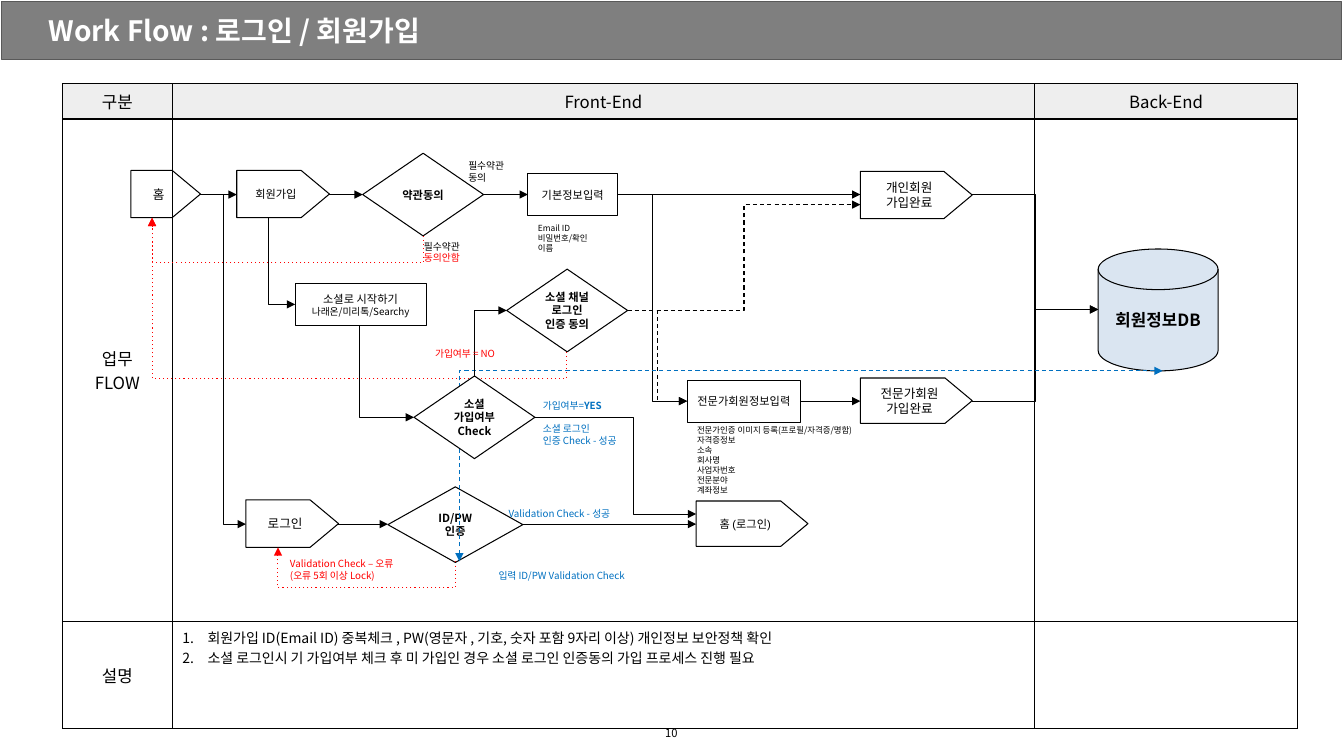
from lxml.etree import SubElement
from pptx import Presentation
from pptx.dml.color import RGBColor
from pptx.enum.shapes import MSO_CONNECTOR as CONN, MSO_SHAPE as SHAPE
from pptx.enum.text import MSO_ANCHOR as ANCHOR, MSO_AUTO_SIZE as FIT, PP_ALIGN as ALIGN
from pptx.oxml.ns import qn
from pptx.util import Emu, Pt

COLORS = {"ink": "000000", "red": "FF0000", "blue": "0070C0", "white": "FFFFFF",
          "head": "EEEEEE", "disk": "DAE5F1", "bar": "7F7F7F", "edge": "595959"}
NOTO, ARIAL = "Noto Sans CJK KR", "Arial"


def px(n):
    return Emu(round(n * 9144))


def rgb(name):
    return RGBColor.from_string(COLORS[name])


class Deck:
    def __init__(self, width, height):
        self.prs = Presentation()
        self.prs.slide_width, self.prs.slide_height = px(width), px(height)
        self.s = self.prs.slides.add_slide(self.prs.slide_layouts[5])

    def text(self, tf, lines, size, color="ink", bold=False, font=NOTO,
             align=ALIGN.LEFT, inset=(10, 5, 10, 5)):
        frame = dict(zip(("margin_left", "margin_top", "margin_right", "margin_bottom"),
                         map(px, inset)))
        frame.update(word_wrap=True, auto_size=FIT.NONE, vertical_anchor=ANCHOR.MIDDLE)
        for key, value in frame.items():
            setattr(tf, key, value)
        for i, line in enumerate(lines):
            p = tf.paragraphs[0] if i == 0 else tf.add_paragraph()
            p.alignment = align
            for text, changes in [(line, {})] if isinstance(line, str) else line:
                r = p.add_run()
                r.text = text
                fmt = {"size": Pt(size), "bold": bold, "name": font, "color": color, **changes}
                r.font.color.rgb = rgb(fmt.pop("color"))
                for key, value in fmt.items():
                    setattr(r.font, key, value)
                SubElement(r.font._element, qn("a:ea"), typeface=NOTO)

    def title(self, box, lines, **fmt):
        sp = self.s.shapes.title
        sp.left, sp.top, sp.width, sp.height = map(px, box)
        self.text(sp.text_frame, lines, **fmt)
        sp._element.getparent().append(sp._element)

    def shape(self, kind, box, lines=(), fill=None, line="ink", size=8, **fmt):
        sp = self.s.shapes.add_shape(kind, *map(px, box))
        sp.shadow.inherit = False
        if fill:
            sp.fill.solid()
            sp.fill.fore_color.rgb = rgb(fill)
        else:
            sp.fill.background()
        sp.line.color.rgb = rgb(line)
        sp.line.width = Pt(0.75)
        if kind == SHAPE.PENTAGON:
            sp.adjustments[0] = 0.6
        self.text(sp.text_frame, lines, size, align=ALIGN.CENTER, **fmt)

    def step(self, box, *lines, size=9):
        self.shape(SHAPE.PENTAGON, box, lines, size=size, font=ARIAL)

    def process(self, box, *lines):
        self.shape(SHAPE.FLOWCHART_PROCESS, box, lines, inset=(4, 5, 4, 5))

    def decision(self, box, *lines):
        self.shape(SHAPE.FLOWCHART_DECISION, box, lines, fill="white", bold=True,
                   inset=(4, 5, 4, 5))

    def label(self, box, *lines, size=7, **fmt):
        sp = self.s.shapes.add_textbox(*map(px, box))
        self.text(sp.text_frame, lines, size, **fmt)

    def link(self, x1, y1, x2, y2, color="ink", dash=None, adj=0.5,
             vertical=False, corner=False, both=False):
        kind = CONN.STRAIGHT if y1 == y2 else CONN.ELBOW
        turn = None
        if vertical:
            right = x2 > x1
            turn = 270 if right else 90
            cx, cy = (x1 + x2) / 2, (y1 + y2) / 2
            dx, dy = abs(y2 - y1) / 2, abs(x2 - x1) / 2
            if (y2 > y1) == right:
                dx = -dx
            x1, y1, x2, y2 = cx - dx, cy - dy, cx + dx, cy + dy
        c = self.s.shapes.add_connector(kind, *map(px, (x1, y1, x2, y2)))
        c.line.color.rgb = rgb(color)
        c.line.width = Pt(0.75)
        spPr = c._element.spPr
        if turn:
            spPr.find(qn("a:xfrm")).set("rot", str(turn * 60000))
        geom = spPr.find(qn("a:prstGeom"))
        if corner:
            geom.set("prst", "bentConnector2")
        elif kind == CONN.ELBOW:
            SubElement(geom.find(qn("a:avLst")), qn("a:gd"), name="adj1",
                       fmla=f"val {round(adj * 100000)}")
        ln = spPr.find(qn("a:ln"))
        if dash:
            SubElement(ln, qn("a:prstDash"), val=dash)
        for end in ("a:headEnd", "a:tailEnd") if both else ("a:tailEnd",):
            SubElement(ln, qn(end), type="triangle")
        SubElement(spPr, qn("a:effectLst"))

    def cell(self, cell, lines, fill=None, numbered=False):
        tcPr = cell._tc.get_or_add_tcPr()
        for side in "LRTB":
            ln = SubElement(tcPr, qn(f"a:ln{side}"), w=str(int(Pt(1))))
            SubElement(SubElement(ln, qn("a:solidFill")), qn("a:srgbClr"), val=COLORS["ink"])
        if fill:
            cell.fill.solid()
            cell.fill.fore_color.rgb = rgb(fill)
        else:
            cell.fill.background()
        tf = cell.text_frame
        self.text(tf, lines, 10 if numbered else 12,
                  align=ALIGN.LEFT if numbered else ALIGN.CENTER)
        cell.vertical_anchor = ANCHOR.TOP if numbered else ANCHOR.MIDDLE
        for p in tf.paragraphs if numbered else ():
            pPr = p._p.get_or_add_pPr()
            pPr.set("marL", str(int(px(25))))
            pPr.set("indent", str(-int(px(25))))
            SubElement(pPr, qn("a:buFont"), typeface=NOTO)
            SubElement(pPr, qn("a:buAutoNum"), type="arabicPeriod")

    def table(self, left, top, widths, heights, rows):
        box = map(px, (left, top, sum(widths), sum(heights)))
        tbl = self.s.shapes.add_table(len(heights), len(widths), *box).table
        for col, width in zip(tbl.columns, widths):
            col.width = px(width)
        for row, height in zip(tbl.rows, heights):
            row.height = px(height)
        for i, row in enumerate(rows):
            for j, lines in enumerate(row):
                self.cell(tbl.cell(i, j), lines, "head" if i == 0 else None, (i, j) == (2, 1))


def main():
    d = Deck(1334, 750)
    d.shape(SHAPE.RECTANGLE, (2, 2, 1330, 57), fill="bar", line="edge")
    d.title((29, 0, 1276, 60), ["Work Flow : 로그인 / 회원가입"], size=20, color="white",
            bold=True, inset=(19, 6, 11, 6))
    d.table(62, 83, (109, 856, 261), (35, 499, 106), [
        [["구분"], ["Front-End"], ["Back-End"]],
        [["업무", "FLOW"], [], []],
        [["설명"],
         ["회원가입 ID(Email ID) 중복체크 , PW(영문자 , 기호, 숫자 포함 9자리 이상) 개인정보 보안정책 확인",
          "소셜 로그인시 기 가입여부 체크 후 미 가입인 경우 소셜 로그인 인증동의 가입 프로세스 진행 필요"],
         []]])
    d.label((0, 708, 1333, 39), "10", size=8, align=ALIGN.CENTER)

    d.step((130, 169, 69, 47), "홈")
    d.step((235, 169, 92, 47), "회원가입", size=8)
    d.step((854, 170, 111, 47), "개인회원", "가입완료")
    d.step((854, 375, 111, 45), "전문가회원", "가입완료")
    d.step((244, 496, 92, 47), "로그인")
    d.step((691, 497, 111, 45), "홈 (로그인)", size=8)
    d.process((524, 172, 89, 42), "기본정보입력")
    d.process((682, 377, 113, 42), "전문가회원정보입력")
    d.process((293, 281, 130, 42), "소셜로 시작하기", [("나래온/미리톡/Searchy", {"size": Pt(7)})])
    d.decision((360, 152, 120, 82), "약관동의")
    d.decision((503, 267, 120, 82), "소셜 채널", "로그인", "인증 동의")
    d.decision((385, 483, 134, 75), "ID/PW", "인증")
    d.shape(SHAPE.FLOWCHART_MAGNETIC_DISK, (1090, 247, 119, 121), ["회원정보DB"],
            fill="disk", size=12, bold=True)

    for x1, x2, y in ((199, 235, 193), (327, 360, 193), (480, 524, 193), (613, 854, 193),
                      (795, 854, 398), (336, 385, 520), (519, 691, 520)):
        d.link(x1, y, x2, y)
    d.link(199, 193, 244, 520)
    d.link(613, 193, 682, 398)
    d.link(965, 193, 1090, 307)
    d.link(965, 398, 1090, 307)
    d.link(531, 414, 691, 510, adj=0.61)
    d.link(623, 308, 854, 203, dash="dash")
    d.link(623, 308, 682, 398, dash="dash")
    d.link(456, 557, 1154, 368, color="blue", dash="dash", adj=0, both=True)
    for x1, y1, x2, y2, adj in ((420, 234, 151, 216, -1.47), (562, 349, 151, 216, -0.2),
                                (452, 557, 276, 543, -1.86)):
        d.link(x1, y1, x2, y2, color="red", dash="dot", adj=adj, vertical=True)
    for ends in ((267, 216, 293, 302), (357, 323, 411, 414), (471, 373, 503, 308)):
        d.link(*ends, vertical=True, corner=True)
    d.decision((411, 373, 120, 82), "소셜", "가입여부", "Check")

    d.label((455, 153, 74, 34), "필수약관", "동의")
    d.label((411, 233, 74, 34), "필수약관", [("동의안함", {"color": "red"})])
    d.label((524, 218, 98, 37), "Email ID", "비밀번호/확인", "이름", size=6)
    d.label((682, 416, 201, 81), "전문가인증 이미지 등록(프로필/자격증/명함)", "자격증정보", "소속",
            "회사명", "사업자번호", "전문분야", "계좌정보", size=6)
    d.label((485, 560, 172, 22), "입력 ID/PW Validation Check", color="blue")
    d.label((495, 498, 172, 22), "Validation Check - 성공", color="blue")
    d.label((529, 414, 107, 34), "소셜 로그인", "인증 Check - 성공", color="blue")
    d.label((529, 391, 90, 22), [("가입여부=", {}), ("YES", {"bold": True})], color="blue")
    d.label((278, 548, 172, 34), "Validation Check – 오류", "(오류 5회 이상 Lock)", color="red")
    d.label((422, 340, 92, 22), "가입여부 = NO", color="red")
    d.prs.save("out.pptx")


if __name__ == "__main__":
    main()
